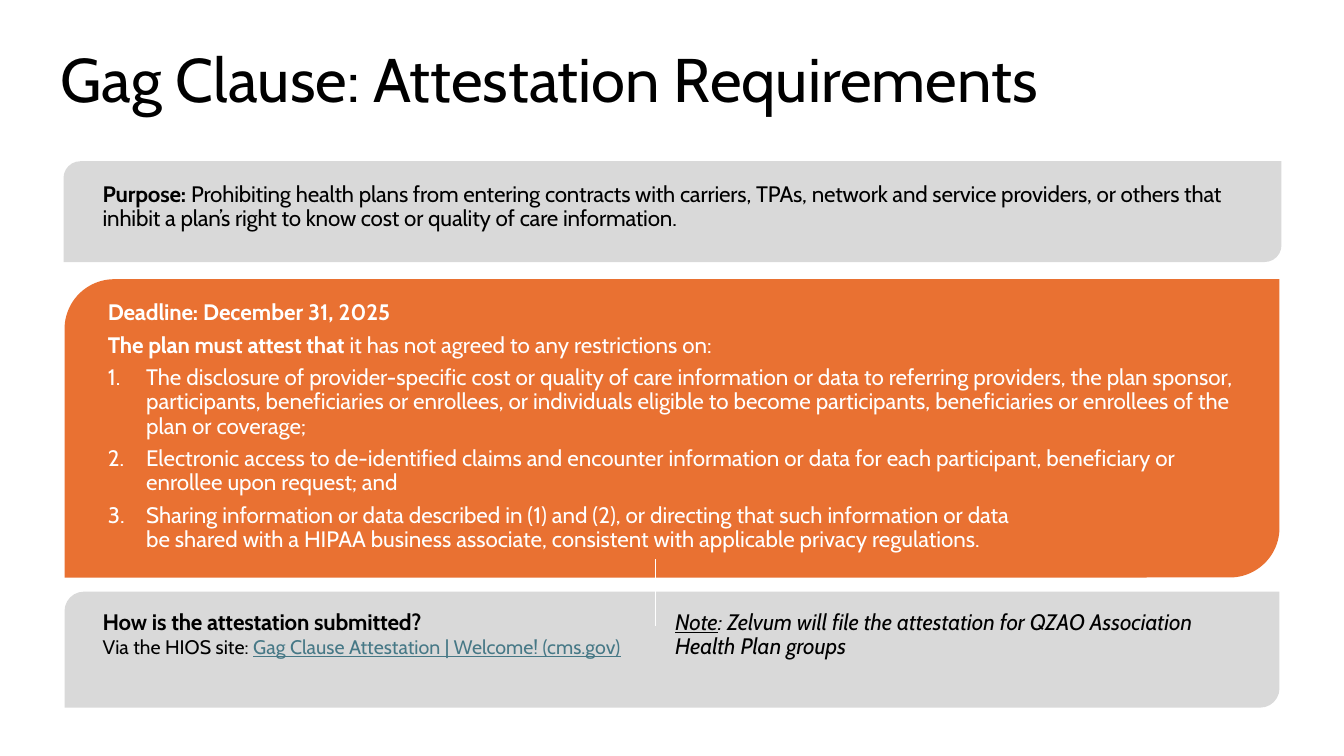
from dataclasses import dataclass
from lxml.etree import SubElement as Sub
from pptx import Presentation
from pptx.dml.color import RGBColor as RGB
from pptx.enum.shapes import MSO_CONNECTOR as Conn, MSO_SHAPE as Shape
from pptx.enum.text import MSO_ANCHOR as Anchor, MSO_AUTO_SIZE as Fit, PP_ALIGN as Align
from pptx.oxml.ns import qn
from pptx.util import Pt

PX = 9144


@dataclass(frozen=True)
class Theme:
    font: str = "Cabin"
    black: str = "000000"
    white: str = "FFFFFF"
    gray: str = "D9D9D9"
    orange: str = "E97132"
    link: str = "467886"
    title: int = 44
    body: int = 16
    small: int = 14


@dataclass(frozen=True)
class Run:
    text: str
    bold: bool = False
    italic: bool = False
    under: bool = False
    tight: bool = False
    size: int = 0
    color: str = ""


class Deck:
    def __init__(self, theme, wide, high):
        self.theme = theme
        self.file = Presentation()
        self.file.slide_width, self.file.slide_height = wide * PX, high * PX
        self.slide = self.file.slides.add_slide(self.file.slide_layouts[6])

    def panel(self, x, y, w, h, color):
        panel = self.slide.shapes.add_shape(
            Shape.ROUND_2_DIAG_RECTANGLE, x * PX, y * PX, w * PX, h * PX)
        panel.shadow.inherit = False
        panel.fill.solid()
        panel.fill.fore_color.rgb = RGB.from_string(color)
        panel.line.fill.background()

    def box(self, x, y, w, h, left=10, cols=1, anchor=Anchor.TOP):
        frame = self.slide.shapes.add_textbox(x * PX, y * PX, w * PX, h * PX).text_frame
        frame.word_wrap = True
        frame.auto_size = Fit.SHAPE_TO_FIT_TEXT
        frame.vertical_anchor = anchor
        frame.margin_left, frame.margin_right = left * PX, 10 * PX
        frame.margin_top = frame.margin_bottom = 5 * PX
        if cols > 1:
            frame._txBody.bodyPr.set("numCol", str(cols))
        return frame

    def para(self, frame, *runs, color=None, lead=0.9, before=0, after=0, hang=0):
        fresh = frame.paragraphs[0]
        par = frame.add_paragraph() if fresh.runs else fresh
        par.alignment = Align.LEFT
        par.line_spacing = lead
        par.space_before, par.space_after = Pt(before), Pt(after)
        if hang:
            props = par._p.get_or_add_pPr()
            props.set("marL", str(hang * PX))
            props.set("indent", str(-hang * PX))
            tint = Sub(props, qn("a:buClr"))
            Sub(tint, qn("a:srgbClr"), val=color)
            Sub(props, qn("a:buAutoNum"), type="arabicPeriod")
        for run in runs:
            self.run(par, run, color or self.theme.black)

    def run(self, par, run, color):
        for i, line in enumerate(run.text.split("\n")):
            if i:
                par.add_line_break()
            piece = par.add_run()
            piece.text = line
            font = piece.font
            font.name = self.theme.font
            font.size = Pt(run.size or self.theme.body)
            font.bold, font.italic, font.underline = run.bold, run.italic, run.under
            font.color.rgb = RGB.from_string(run.color or color)
            if run.tight:
                piece._r.get_or_add_rPr().set("spc", "-10")

    def line(self, x1, y1, x2, y2, color):
        line = self.slide.shapes.add_connector(
            Conn.STRAIGHT, x1 * PX, y1 * PX, x2 * PX, y2 * PX)
        line.line.color.rgb = RGB.from_string(color)
        line.line.width = Pt(1)
        Sub(line._element.spPr, qn("a:effectLst"))


def main():
    look = Theme()
    deck = Deck(look, 1333, 750)

    title = deck.box(50, 45, 1233, 73, anchor=Anchor.MIDDLE)
    deck.para(title, Run("Gag Clause: Attestation Requirements", size=look.title))

    deck.panel(64, 587, 1205, 115, look.gray)
    submit = deck.box(92, 601, 1155, 75, cols=2)
    deck.para(submit, Run("How is the attestation submitted?", bold=True, tight=True), before=12)
    deck.para(
        submit,
        Run("Via the HIOS site: ", size=look.small),
        Run("Gag Clause Attestation | Welcome! (cms.gov)", under=True,
            size=look.small, color=look.link),
        lead=1.0, after=12)
    deck.para(
        submit,
        Run("Note", italic=True, under=True),
        Run(": Zelvum will file the attestation for QZAO Association Health Plan groups",
            italic=True),
        before=6)

    deck.panel(63, 160, 1208, 100, look.gray)
    aim = deck.box(92, 177, 1140, 59)
    deck.para(
        aim,
        Run("Purpose: ", bold=True, tight=True),
        Run("Prohibiting health plans from entering contracts with carriers, TPAs, "
            "network and service providers, or others that inhibit a plan’s right to "
            "know cost or quality of care information.", tight=True))

    deck.panel(64, 277, 1205, 296, look.orange)
    duty = deck.box(87, 294, 1160, 262, left=20)
    deck.para(
        duty,
        Run("Deadline: ", bold=True, tight=True),
        Run("December 31, 2025", bold=True),
        color=look.white, after=6)
    deck.para(
        duty,
        Run("The plan must attest that ", bold=True, tight=True),
        Run("it has not agreed to any restrictions on:"),
        color=look.white, after=6)
    for item in (
        "The disclosure of provider-specific cost or quality of care information or data "
        "to referring providers, the plan sponsor, participants, beneficiaries or "
        "enrollees, or individuals eligible to become participants, beneficiaries or "
        "enrollees of the plan or coverage;",
        "Electronic access to de-identified claims and encounter information or data for "
        "each participant, beneficiary or enrollee upon request; and",
        "Sharing information or data described in (1) and (2), or directing that such "
        "information or data \nbe shared with a HIPAA business associate, consistent "
        "with applicable privacy regulations.",
    ):
        deck.para(duty, Run(item), color=look.white, after=6, hang=38)

    deck.line(650, 555, 650, 621, look.white)
    deck.file.save("out.pptx")


if __name__ == "__main__":
    main()
